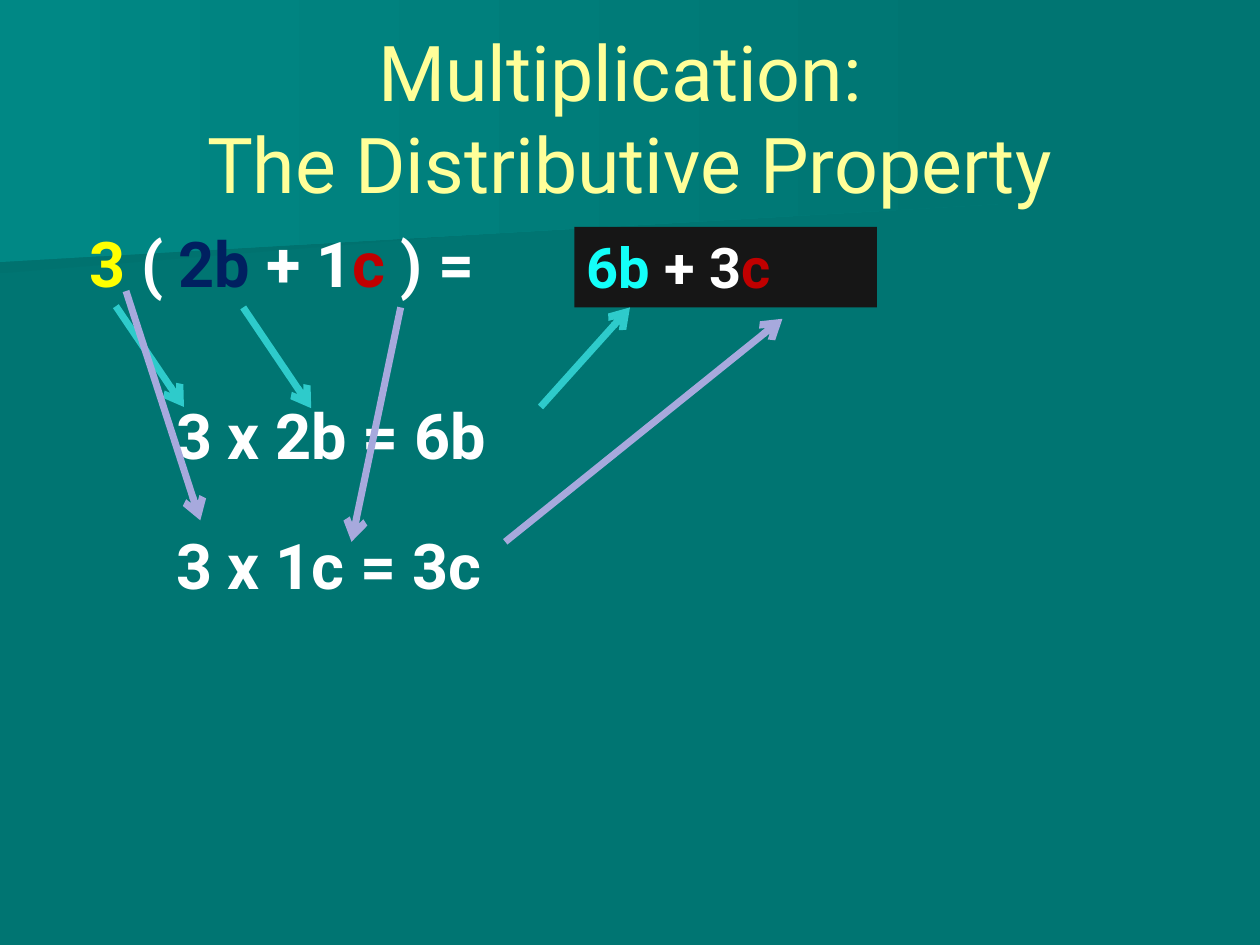
from lxml import etree
from pptx import Presentation
from pptx.dml.color import RGBColor
from pptx.enum import shapes, text
from pptx.oxml import ns
from pptx.util import Inches, Pt

FONT = "Roboto"
COLORS = {
    "teal": "007572", "light teal": "008885", "dark teal": "00726F",
    "title": "FFFF99", "yellow": "FFFF00", "white": "FFFFFF",
    "navy": "002060", "red": "C00000", "cyan": "13FFF9",
    "panel": "161616", "first term": "2ECBCB", "second term": "A7A9DD",
}


def rgb(name):
    return RGBColor.from_string(COLORS[name])


def box_inches(box):
    return [Inches(length) for length in box]


def add_sweep(slide, box, points, start_color):
    """Draw a gradient band; points are relative to the box's corner."""
    left, top = box
    start, *rest = [(Inches(left + x), Inches(top + y)) for x, y in points]
    builder = slide.shapes.build_freeform(*start)
    builder.add_line_segments(rest, close=True)
    sweep = builder.convert_to_shape()
    sweep.shadow.inherit = False
    sweep.line.fill.background()
    sweep.fill.gradient()
    sweep.fill.gradient_angle = 0
    for stop, color in zip(sweep.fill.gradient_stops, (start_color, "teal")):
        stop.color.rgb = rgb(color)


def add_background(slide):
    slide.background.fill.solid()
    slide.background.fill.fore_color.rgb = rgb("teal")
    add_sweep(slide, (0, 1.01),
              [(7.78, 0.52), (0, 1.16), (0, 0), (7.79, 0), (7.78, 0.27)], "dark teal")
    add_sweep(slide, (0, 0), [(7.92, 1.62), (0, 2.08), (0, 0), (7.92, 0)], "light teal")


def format_text(paragraph, size, bold):
    for run in paragraph.runs:
        for key, value in {"name": FONT, "size": Pt(size), "bold": bold}.items():
            setattr(run.font, key, value)


def place_title(slide, box, wording):
    title = slide.shapes.title
    for side, length in zip(("left", "top", "width", "height"), box_inches(box)):
        setattr(title, side, length)
    frame = title.text_frame
    frame.text = wording
    frame.auto_size = text.MSO_AUTO_SIZE.NONE
    frame.vertical_anchor = text.MSO_ANCHOR.MIDDLE
    paragraph = frame.paragraphs[0]
    paragraph.alignment = text.PP_ALIGN.CENTER
    format_text(paragraph, 44, False)
    for run in paragraph.runs:
        run.font.color.rgb = rgb("title")
    # The title stands in front of the background sweeps.
    title.element.getparent().append(title.element)


def write_expression(shape, terms, size, wrap):
    frame = shape.text_frame
    frame.word_wrap = wrap
    frame.auto_size = text.MSO_AUTO_SIZE.SHAPE_TO_FIT_TEXT
    frame.vertical_anchor = text.MSO_ANCHOR.TOP
    paragraph = frame.paragraphs[0]
    paragraph.alignment = text.PP_ALIGN.LEFT
    for wording, color in terms:
        run = paragraph.add_run()
        run.text = wording
        run.font.color.rgb = rgb(color)
    format_text(paragraph, size, True)


def add_expression(slide, box, terms):
    expression = slide.shapes.add_textbox(*box_inches(box))
    write_expression(expression, terms, 36, False)


def add_answer(slide, box, terms):
    answer = slide.shapes.add_shape(shapes.MSO_SHAPE.RECTANGLE, *box_inches(box))
    answer.shadow.inherit = False
    answer.fill.solid()
    answer.fill.fore_color.rgb = rgb("panel")
    answer.line.fill.background()
    write_expression(answer, terms, 32, True)


def add_arrow(slide, start, end, color):
    arrow = slide.shapes.add_connector(
        shapes.MSO_CONNECTOR.STRAIGHT, *box_inches(start + end))
    arrow.line.color.rgb = rgb(color)
    arrow.line.width = Pt(4)
    line = arrow.line._get_or_add_ln()
    etree.SubElement(line, ns.qn("a:tailEnd"), type="arrow")
    etree.SubElement(arrow.element.spPr, ns.qn("a:effectLst"))


def add_distribution(slide):
    add_expression(slide, (0.61, 1.73, 3.92, 0.71), [
        ("3 ", "yellow"), ("( ", "white"), ("2b ", "navy"),
        ("+ 1", "white"), ("c ", "red"), (") =", "white")])
    add_answer(slide, (4.56, 1.8, 2.4, 0.64),
               [("6b ", "cyan"), ("+ 3", "white"), ("c", "red")])
    add_expression(slide, (1.3, 3.1, 3.11, 0.71), [("3 x 2b = 6b", "white")])
    add_expression(slide, (1.3, 4.13, 3.01, 0.71), [("3 x 1c = 3c", "white")])
    arrows = {
        "first term": [((1.93, 2.44), (2.47, 3.24)), ((4.29, 3.23), (5, 2.44)),
                       ((0.92, 2.43), (1.46, 3.23))],
        "second term": [((1, 2.31), (1.59, 4.13)), ((3.18, 2.44), (2.79, 4.3)),
                        ((4.01, 4.3), (6.21, 2.53))],
    }
    for color, routes in arrows.items():
        for start, end in routes:
            add_arrow(slide, start, end, color)


def main():
    deck = Presentation()
    deck.slide_width, deck.slide_height = Inches(10), Inches(7.5)
    slide = deck.slides.add_slide(deck.slide_layouts.get_by_name("Title Only"))
    add_background(slide)
    place_title(slide, (0.5, 0.3, 9, 1.25),
                "Multiplication: \vThe Distributive Property")
    add_distribution(slide)
    deck.save("out.pptx")


if __name__ == "__main__":
    main()
